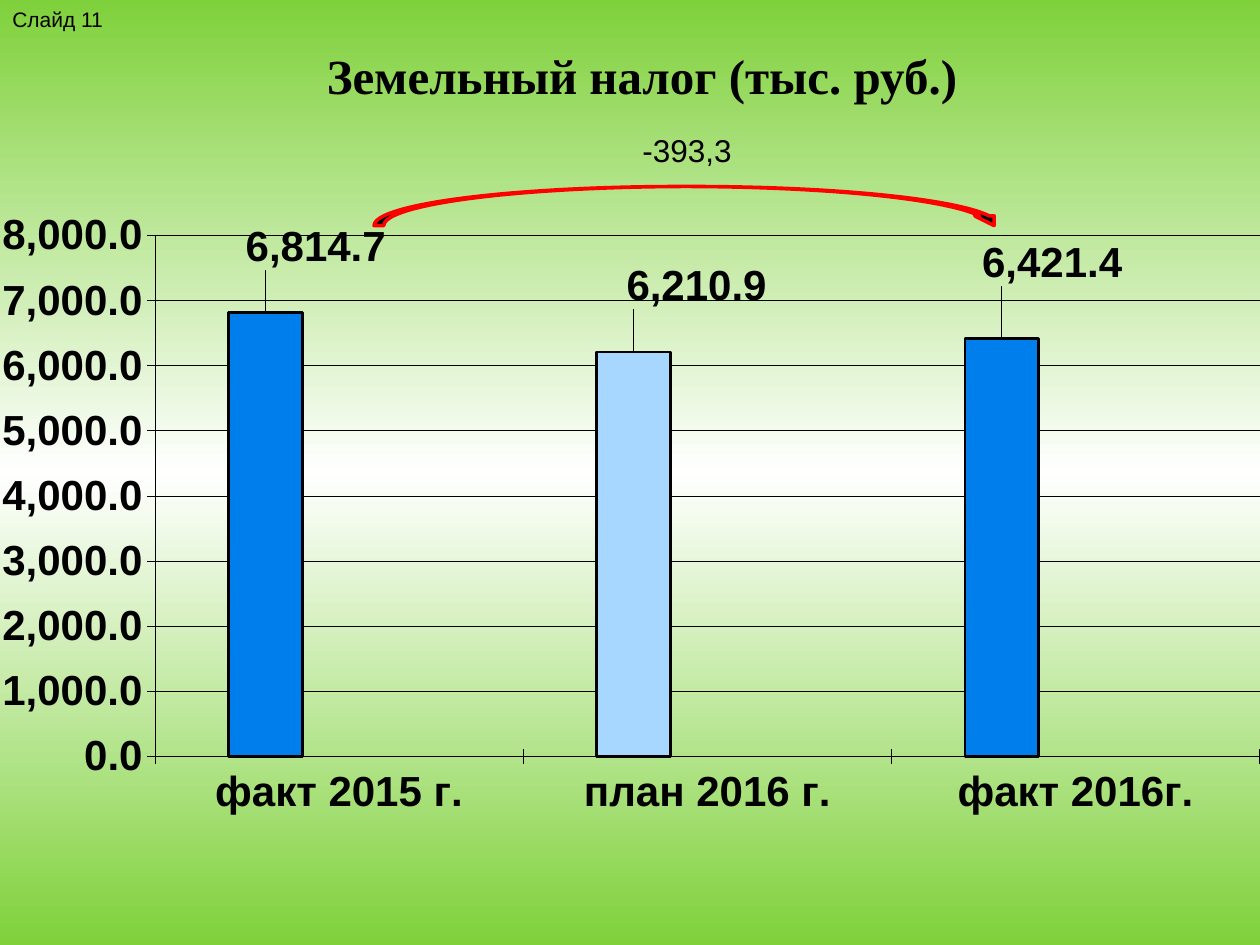
"""Build the land tax slide with a column chart and a change arrow."""
from copy import deepcopy
from dataclasses import dataclass

from lxml import etree
from pptx import Presentation
from pptx.chart.data import CategoryChartData
from pptx.dml.color import RGBColor
from pptx.enum.chart import XL_CHART_TYPE, XL_LABEL_POSITION, XL_TICK_LABEL_POSITION, XL_TICK_MARK
from pptx.enum.shapes import MSO_SHAPE
from pptx.enum.text import MSO_ANCHOR, PP_ALIGN
from pptx.oxml.ns import qn
from pptx.util import Cm, Pt

COLUMNS = XL_CHART_TYPE.COLUMN_CLUSTERED
OUTSIDE = XL_LABEL_POSITION.OUTSIDE_END
LOW = XL_TICK_LABEL_POSITION.LOW
CROSS, NO_TICK = XL_TICK_MARK.CROSS, XL_TICK_MARK.NONE
CURVED_ARROW = MSO_SHAPE.CURVED_DOWN_ARROW
TOP, CENTER = MSO_ANCHOR.TOP, PP_ALIGN.CENTER
NUMBER_FORMAT = "#,##0.0"


@dataclass(frozen=True)
class Theme:
    """Colours, fonts and type sizes."""
    black: RGBColor = RGBColor(0, 0, 0)
    white: RGBColor = RGBColor(255, 255, 255)
    green: RGBColor = RGBColor.from_string("7FD13B")
    red: RGBColor = RGBColor.from_string("FF0000")
    fact: RGBColor = RGBColor.from_string("007EEB")
    plan: RGBColor = RGBColor.from_string("A7D6FF")
    sans: str = "Arial"
    serif: str = "Times New Roman"
    note: Pt = Pt(12)
    change: Pt = Pt(18)
    chart: Pt = Pt(24)
    title: Pt = Pt(28)
    hairline: Pt = Pt(0.38)
    outline: Pt = Pt(1.5)


@dataclass(frozen=True)
class Box:
    """Position and size in centimetres."""
    left: float
    top: float
    width: float
    height: float

    def lengths(self) -> tuple:
        """Return the four lengths for a shape."""
        return Cm(self.left), Cm(self.top), Cm(self.width), Cm(self.height)


@dataclass(frozen=True)
class Column:
    """One column with its label offset as a share of the chart."""
    name: str
    value: float
    color: RGBColor
    dx: float
    dy: float


T = Theme()
COLUMN_DATA = [
    Column("факт 2015 г.", 6814.7, T.fact, 0.04, -0.04),
    Column("план 2016 г.", 6210.9, T.plan, 0.05, -0.04),
    Column("факт 2016г.", 6421.4, T.fact, 0.04, -0.05),
]


def style_font(font, size, name: str = T.sans, bold: bool = False) -> None:
    """Apply size, face and colour to a font."""
    font.size, font.name, font.bold = size, name, bold
    font.color.rgb = T.black


def style_line(line, color: RGBColor, width) -> None:
    """Apply a solid line."""
    line.color.rgb = color
    line.width = width


def make_layout(**values) -> etree.ElementBase:
    """Return a manual chart layout element."""
    layout = etree.Element(qn("c:layout"))
    manual = etree.SubElement(layout, qn("c:manualLayout"))
    for tag, value in values.items():
        etree.SubElement(manual, qn(f"c:{tag}")).set("val", str(value))
    return layout


def paint_background(s) -> None:
    """Fill the slide with a green, white, green gradient."""
    fill = s.background.fill
    fill.gradient()
    fill.gradient_angle = 270
    stops = fill._fill._gradFill.find(qn("a:gsLst"))
    stops.append(deepcopy(stops[-1]))
    for stop, place, color in zip(fill.gradient_stops, (0, 0.5, 1), (T.green, T.white, T.green)):
        stop.position = place
        stop.color.rgb = color


def add_text(s, box: Box, text: str, size, wrap: bool) -> None:
    """Add a plain text box."""
    tf = s.shapes.add_textbox(*box.lengths()).text_frame
    tf.word_wrap = wrap
    tf.text = text
    style_font(tf.paragraphs[0].runs[0].font, size)


def set_title(s, box: Box, text: str) -> None:
    """Move, fill and format the title placeholder."""
    sp = s.shapes.title
    sp.left, sp.top, sp.width, sp.height = box.lengths()
    tf = sp.text_frame
    tf.text, tf.vertical_anchor = text, TOP
    p = tf.paragraphs[0]
    p.alignment, p.space_before = CENTER, Pt(3.5)
    style_font(p.runs[0].font, T.title, T.serif, True)


def style_axis(axis) -> None:
    """Format the line, ticks and labels of an axis."""
    axis.major_tick_mark, axis.minor_tick_mark = CROSS, NO_TICK
    style_font(axis.tick_labels.font, T.chart, bold=True)
    style_line(axis.format.line, T.black, T.hairline)


def style_columns(series, columns: list[Column]) -> None:
    """Colour the columns and place their labels."""
    labels = series.data_labels
    labels.show_value = True
    labels.number_format, labels.number_format_is_linked = NUMBER_FORMAT, False
    style_font(labels.font, T.chart, bold=True)
    for i, column in enumerate(columns):
        point = series.points[i]
        point.format.fill.solid()
        point.format.fill.fore_color.rgb = column.color
        style_line(point.format.line, T.black, T.outline)
        style_font(point.data_label.font, T.chart, bold=True)
        point.data_label.position = OUTSIDE
    for label, column in zip(labels._element.findall(qn("c:dLbl")), columns):
        label.find(qn("c:idx")).addnext(make_layout(x=column.dx, y=column.dy))


def add_tax_chart(s, box: Box, columns: list[Column]) -> None:
    """Add the column chart with two empty series beside the values."""
    data = CategoryChartData(number_format=NUMBER_FORMAT)
    data.categories = [c.name for c in columns]
    data.add_series("Series 1", [c.value for c in columns])
    for name in ("Series 2", "Series 3"):
        data.add_series(name, [None] * len(columns))
    chart = s.shapes.add_chart(COLUMNS, *box.lengths(), data).chart
    chart.has_legend = chart.has_title = False
    style_font(chart.font, T.chart, bold=True)
    plot = chart.plots[0]
    plot.gap_width, plot.overlap, plot.vary_by_categories = 200, 0, False
    style_axis(chart.category_axis)
    chart.category_axis.tick_label_position = LOW
    axis = chart.value_axis
    style_axis(axis)
    axis.minimum_scale, axis.maximum_scale, axis.major_unit = 0, 8000, 1000
    axis.tick_labels.number_format = NUMBER_FORMAT
    axis.tick_labels.number_format_is_linked = False
    style_line(axis.major_gridlines.format.line, T.black, T.hairline)
    style_columns(plot.series[0], columns)
    area = chart._chartSpace.chart.plotArea
    for old in area.findall(qn("c:layout")):
        area.remove(old)
    area.insert(0, make_layout(layoutTarget="inner", xMode="edge", yMode="edge",
                               x=0.123, y=0.21, w=0.877, h=0.557))


def add_change_arrow(s, box: Box) -> None:
    """Add the curved arrow between the two actual years."""
    sp = s.shapes.add_shape(CURVED_ARROW, *box.lengths())
    sp.shadow.inherit = False
    sp.fill.solid()
    sp.fill.fore_color.rgb = T.black
    style_line(sp.line, T.red, Pt(2))


def main() -> None:
    """Build and save the slide."""
    prs = Presentation()
    prs.slide_width, prs.slide_height = Cm(25.4), Cm(19.05)
    s = prs.slides.add_slide(prs.slide_layouts[5])
    paint_background(s)
    add_text(s, Box(0, 0, 2.39, 1.3), "Слайд 11", T.note, True)
    add_tax_chart(s, Box(0, 0.79, 25.4, 18.85), COLUMN_DATA)
    set_title(s, Box(1.19, 0.79, 23.5, 3.38), "Земельный налог (тыс. руб.)")
    add_change_arrow(s, Box(7.54, 3.76, 12.7, 0.79))
    add_text(s, Box(12.7, 2.51, 2.34, 1.02), "-393,3", T.change, False)
    prs.save("out.pptx")


if __name__ == "__main__":
    main()
